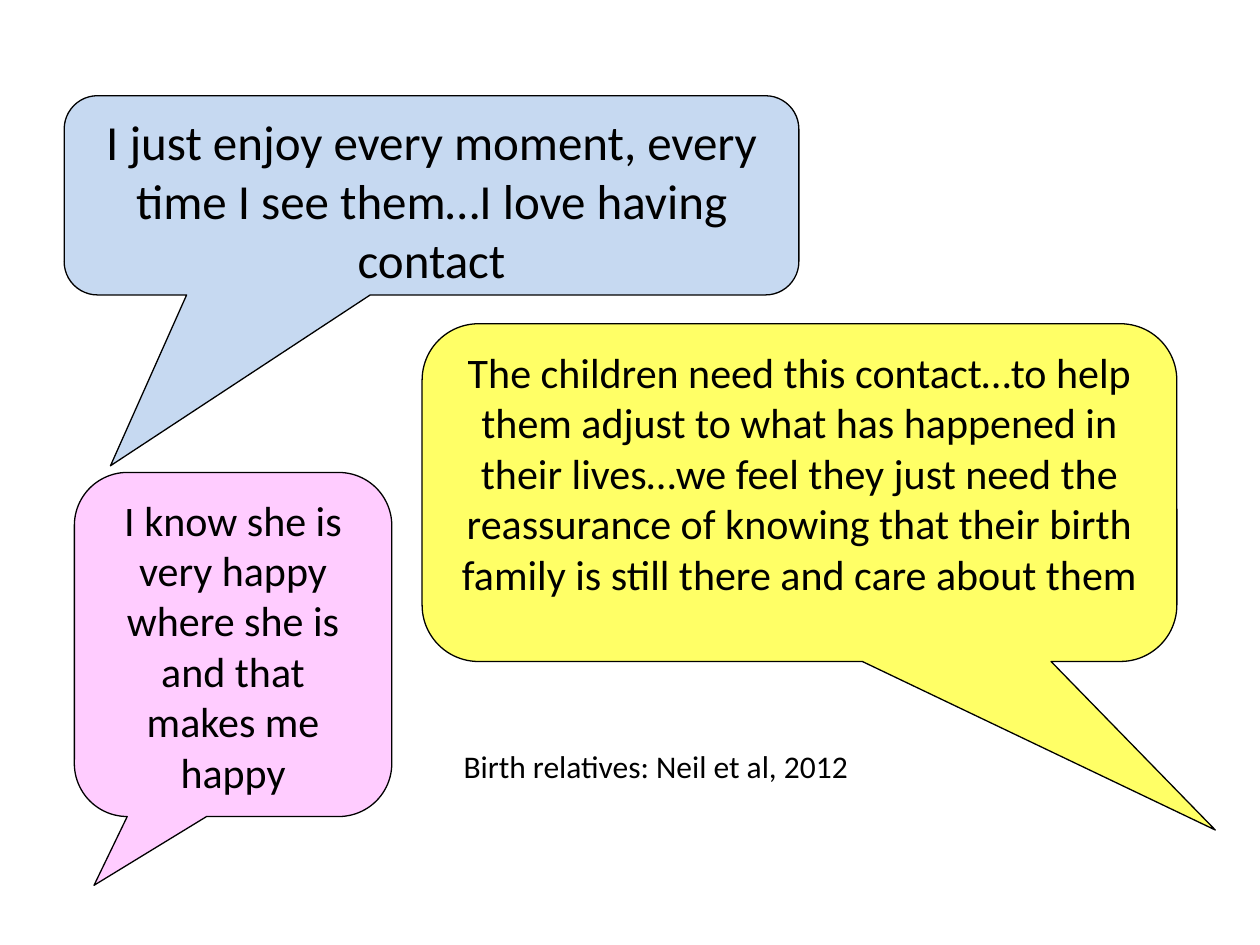
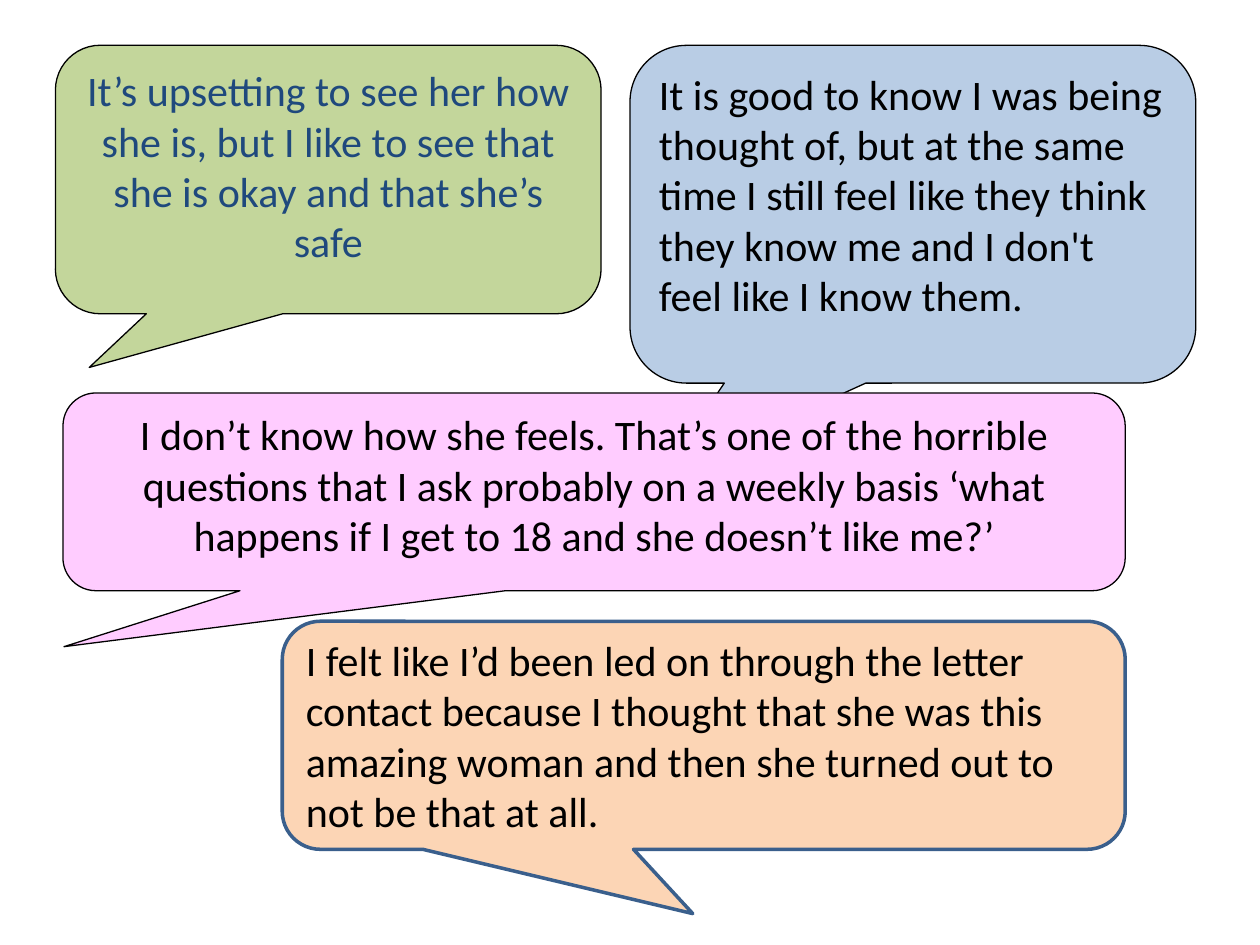
"""Build two slides of quotes from birth relatives in speech bubbles."""
from pptx import Presentation
from pptx.dml.color import RGBColor
from pptx.enum.shapes import MSO_SHAPE
from pptx.enum.text import MSO_ANCHOR, PP_ALIGN
from pptx.util import Pt

HUES = {
    "black": "000000", "navy": "1F497D", "edge": "3A5F8C",
    "sky": "C6D9F1", "yellow": "FFFF66", "pink": "FFCCFF",
    "green": "C3D69B", "blue": "B9CDE5", "peach": "FCD5B5",
}
FONT = "Calibri"


def hue(name):
    return RGBColor.from_string(HUES[name])


def write(shape, text, size=24, color="black", align=PP_ALIGN.CENTER,
          anchor=MSO_ANCHOR.TOP):
    frame = shape.text_frame
    frame.word_wrap = True
    frame.vertical_anchor = anchor
    para = frame.paragraphs[0]
    para.alignment = align
    run = para.add_run()
    run.text = text
    run.font.name = FONT
    run.font.size = Pt(size)
    run.font.color.rgb = hue(color)


LEFT = {"align": PP_ALIGN.LEFT}
QUOTES = [
    [
        ("I just enjoy every moment, every time I see them…I love having contact",
         (36.7, 54.7, 419.8, 113.8), (-0.437, 1.358), "sky", {"size": 28}),
        ("The children need this contact…to help them adjust to what has "
         "happened in their lives…we feel they just need the reassurance of "
         "knowing that their birth family is still there and care about them",
         (241.2, 185, 431.3, 193), (0.551, 0.999), "yellow", {}),
        ("I know she is very happy where she is and that makes me happy",
         (42.5, 270, 181.4, 196.6), (-0.438, 0.7), "pink", {}),
    ],
    [
        ("It’s upsetting to see her how she is, but I like to see that she is "
         "okay and that she’s safe",
         (31.7, 25.9, 311.8, 153.4), (-0.438, 0.7), "green", {"color": "navy"}),
        ("It is good to know I was being thought of, but at the same time I "
         "still feel like they think they know me and I don't feel like I "
         "know them.",
         (360, 25.9, 323.3, 193), (-0.443, 0.774), "blue", LEFT),
        ("I don’t know how she feels. That’s one of the horrible questions "
         "that I ask probably on a weekly basis ‘what happens if I get to 18 "
         "and she doesn’t like me?’",
         (36, 224.6, 607, 113), (-0.499, 0.783), "pink", {}),
        ("I felt like I’d been led on through the letter contact because I "
         "thought that she was this amazing woman and then she turned out to "
         "not be that at all.",
         (161.3, 355, 481.7, 130.3), (-0.013, 0.782), "peach",
         {**LEFT, "anchor": MSO_ANCHOR.MIDDLE}),
    ],
]

deck = Presentation()
deck.slide_width, deck.slide_height = Pt(720), Pt(540)

for group in QUOTES:
    slide = deck.slides.add_slide(deck.slide_layouts[6])
    for text, place, tip, fill, style in group:
        bubble = slide.shapes.add_shape(
            MSO_SHAPE.ROUNDED_RECTANGULAR_CALLOUT, *map(Pt, place))
        for i, value in enumerate((*tip, 0.167)):
            bubble.adjustments[i] = value
        bubble.shadow.inherit = False
        bubble.fill.solid()
        bubble.fill.fore_color.rgb = hue(fill)
        bold = fill == "peach"
        bubble.line.color.rgb = hue("edge" if bold else "black")
        bubble.line.width = Pt(2 if bold else 0.75)
        write(bubble, text, **style)

source = deck.slides[0].shapes.add_textbox(
    Pt(257.8), Pt(423.4), Pt(289.4), Pt(28.8))
write(source, "Birth relatives: Neil et al, 2012", size=18, **LEFT)

deck.save("out.pptx")
